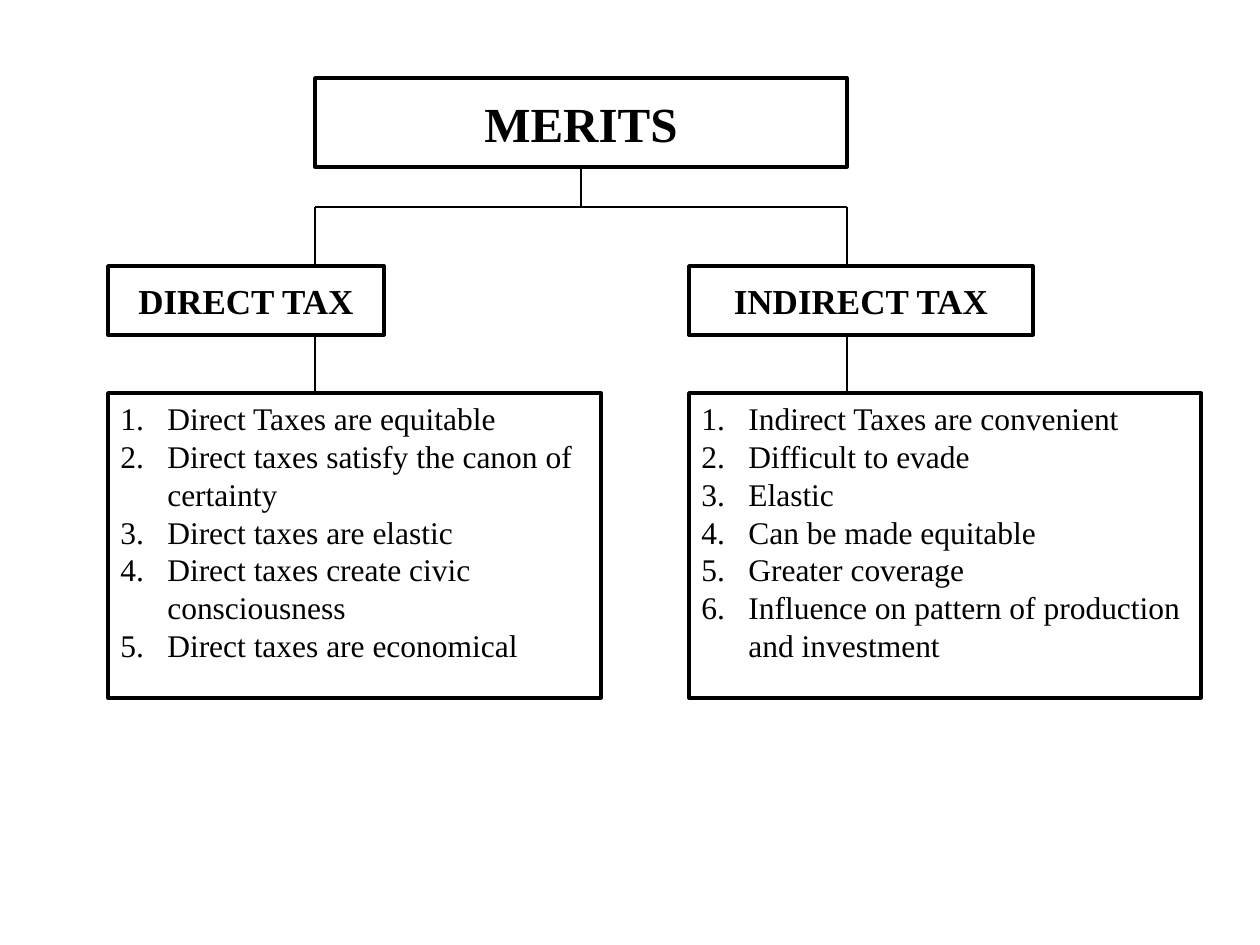
from lxml import etree
from pptx import Presentation
from pptx.dml.color import RGBColor
from pptx.enum.shapes import MSO_CONNECTOR, MSO_SHAPE
from pptx.enum.text import MSO_ANCHOR, PP_ALIGN
from pptx.oxml.ns import qn
from pptx.util import Emu, Pt

PX = 914400 // 126
BLACK = RGBColor(0x00, 0x00, 0x00)
WHITE = RGBColor(0xFF, 0xFF, 0xFF)
FONT = "Times New Roman"

presentation = Presentation()
presentation.slide_width = Emu(1260 * PX)
presentation.slide_height = Emu(945 * PX)
slide = presentation.slides.add_slide(presentation.slide_layouts[6])


def add_box(lines, left, top, width, height, size=18, bold=False, numbered=False):
    shape = slide.shapes.add_shape(
        MSO_SHAPE.RECTANGLE, *(Emu(value * PX) for value in (left, top, width, height)))
    shape.shadow.inherit = False
    shape.fill.solid()
    shape.fill.fore_color.rgb = WHITE
    shape.line.color.rgb = BLACK
    shape.line.width = Pt(2)
    frame = shape.text_frame
    frame.word_wrap = True
    frame.vertical_anchor = MSO_ANCHOR.TOP if numbered else MSO_ANCHOR.MIDDLE
    for index, line in enumerate(lines):
        paragraph = frame.add_paragraph() if index else frame.paragraphs[0]
        paragraph.alignment = PP_ALIGN.LEFT if numbered else PP_ALIGN.CENTER
        run = paragraph.add_run()
        run.text = line
        run.font.name = FONT
        run.font.size = Pt(size)
        run.font.bold = bold
        run.font.color.rgb = BLACK
        if numbered:
            properties = paragraph._p.get_or_add_pPr()
            properties.set("marL", str(47 * PX))
            properties.set("indent", str(-47 * PX))
            etree.SubElement(properties, qn("a:buFont"), typeface="+mj-lt")
            etree.SubElement(properties, qn("a:buAutoNum"), type="arabicPeriod")


def add_line(*ends):
    connector = slide.shapes.add_connector(
        MSO_CONNECTOR.STRAIGHT, *(Emu(value * PX) for value in ends))
    connector.line.color.rgb = BLACK
    connector.line.width = Pt(1.25)
    etree.SubElement(connector._element.spPr, qn("a:effectLst"))


# Vertical levels of the tree
TITLE_TOP, TITLE_BOTTOM = 78, 167
BRANCH_Y = 207
HEAD_TOP, HEAD_BOTTOM = 266, 335
LIST_TOP, LIST_BOTTOM = 393, 698
TITLE_LEFT, TITLE_WIDTH = 315, 532
CENTER_X = TITLE_LEFT + TITLE_WIDTH // 2

# Title and trunk
add_box(["MERITS"], TITLE_LEFT, TITLE_TOP, TITLE_WIDTH, TITLE_BOTTOM - TITLE_TOP,
        size=28, bold=True)
add_line(CENTER_X, TITLE_BOTTOM, CENTER_X, BRANCH_Y)

# Branches: heading, left, heading width, list width, line x, merits
branches = [
    ("DIRECT TAX", 108, 276, 493, TITLE_LEFT, [
        "Direct Taxes are equitable",
        "Direct taxes satisfy the canon of certainty",
        "Direct taxes are elastic",
        "Direct taxes create civic consciousness",
        "Direct taxes are economical",
    ]),
    ("INDIRECT TAX", 689, 344, 512, TITLE_LEFT + TITLE_WIDTH, [
        "Indirect Taxes are convenient",
        "Difficult to evade",
        "Elastic",
        "Can be made equitable",
        "Greater coverage",
        "Influence on pattern of production and investment",
    ]),
]
for heading, left, head_width, list_width, line_x, merits in branches:
    add_box([heading], left, HEAD_TOP, head_width, HEAD_BOTTOM - HEAD_TOP,
            size=20, bold=True)
    add_box(merits, left, LIST_TOP, list_width, LIST_BOTTOM - LIST_TOP, numbered=True)
    add_line(CENTER_X, BRANCH_Y, line_x, BRANCH_Y)
    add_line(line_x, BRANCH_Y, line_x, HEAD_TOP)
    add_line(line_x, HEAD_BOTTOM, line_x, LIST_TOP)

presentation.save("out.pptx")
